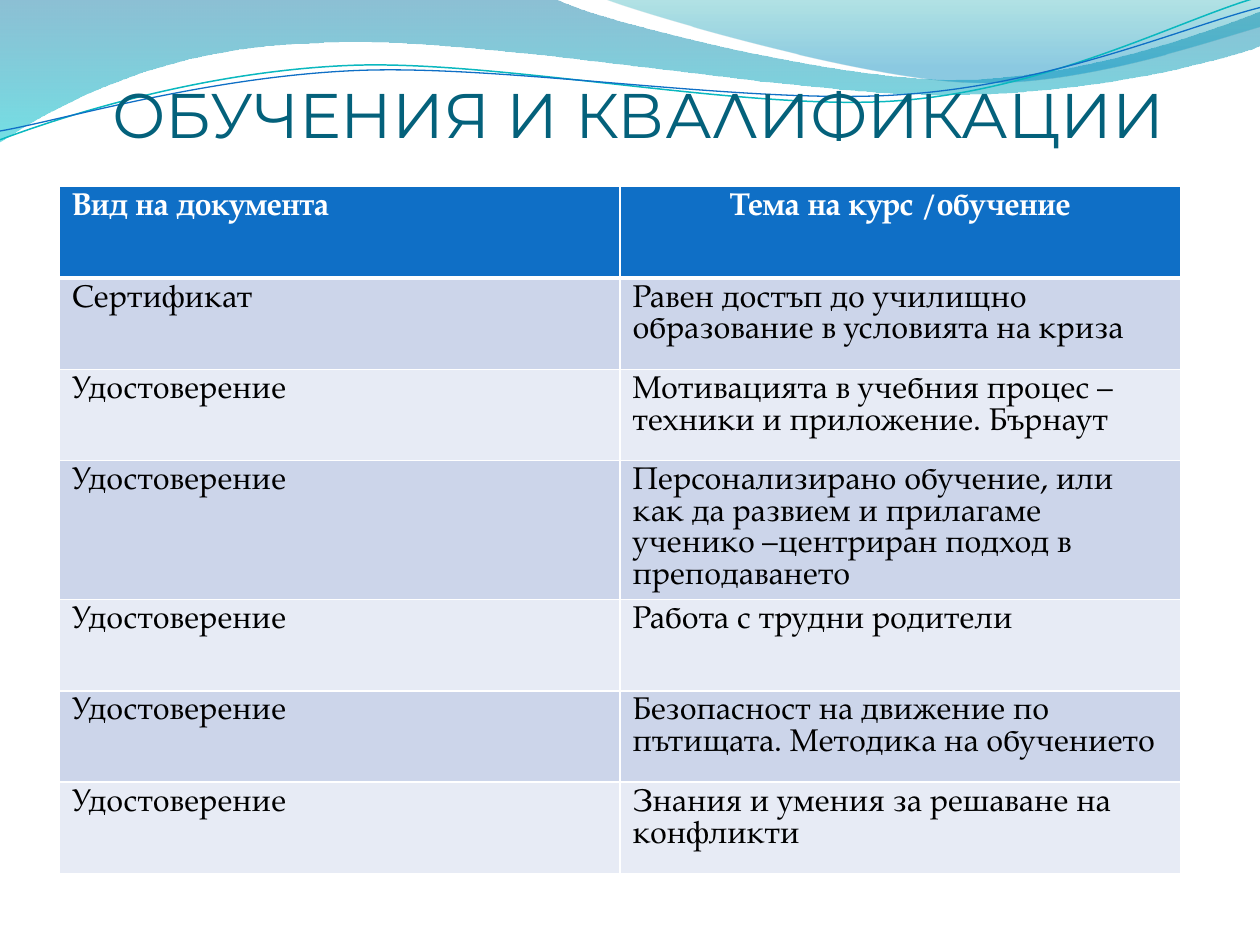
from lxml.etree import SubElement
from pptx import Presentation
from pptx.dml.color import RGBColor
from pptx.enum.lang import MSO_LANGUAGE_ID
from pptx.enum.text import MSO_ANCHOR, PP_ALIGN
from pptx.oxml.ns import qn
from pptx.util import Inches, Pt

COLORS = {
    "title": "04617B", "header": "0F6FC6", "header_text": "FFFFFF",
    "odd": "CCD5EA", "even": "E7EBF5", "text": "000000", "border": "FFFFFF",
    "teal_line": "0AB8BF", "blue_line": "0F6FC6",
    "deep_blue": "0074A1", "aqua": "00C6CF", "teal": "00A1A9", "sky": "008BBF",
}

deck = Presentation()
deck.slide_width, deck.slide_height = Inches(10), Inches(7.5)
width, height = deck.slide_width, deck.slide_height
page = deck.slides.add_slide(deck.slide_layouts[6])


def add_text(para, text, font, size, color, bold=False, align=PP_ALIGN.LEFT):
    para.alignment = align
    span = para.add_run()
    span.text = text
    span.font.name, span.font.size, span.font.bold = font, Pt(size), bold
    span.font.language_id = MSO_LANGUAGE_ID.BULGARIAN
    span.font.color.rgb = RGBColor.from_string(COLORS[color])


def add_wave(points, closed):
    """Draw a path in inches; a 2-tuple is a corner, a 6-tuple a Bézier curve."""
    points = [tuple(Inches(value) for value in point) for point in points]
    builder = page.shapes.build_freeform(*points[0], scale=1.0)
    builder.add_line_segments([point[-2:] for point in points[1:]], close=closed)
    wave = builder.convert_to_shape()
    wave.shadow.inherit = False
    segments = list(wave._element.iter(qn("a:lnTo")))
    for segment, point in zip(segments, points[1:]):
        if len(point) == 6:
            curve = segment.getparent().makeelement(qn("a:cubicBezTo"), {})
            for x, y in zip(point[::2], point[1::2]):
                SubElement(curve, qn("a:pt"), x=str(x - wave.left), y=str(y - wave.top))
            segment.getparent().replace(segment, curve)
    return wave


# Translucent bands: outline, then gradient stops (position, colour, opacity)
bands = [
    ([(0, 0), (4.4, -0.01), (4.76, 0.17, 6.64, 0.63, 7.58, 0.63),
      (8.53, 0.63, 9.58, 0.26, 10, 0.09), (10.01, 0.36),
      (9.83, 0.44, 8.7, 0.76, 7.46, 0.75), (6.22, 0.75, 3.82, 0.28, 2.57, 0.34),
      (1.29, 0.36, 0.46, 0.83, -0.01, 1.13)],
     [(0, "deep_blue", 45), (100, "aqua", 55)]),
    ([(4.79, -0.01), (5.09, 0.11, 6.82, 0.62, 7.69, 0.65),
      (8.56, 0.69, 9.61, 0.32, 10, 0.21), (10, 0)],
     [(0, "teal", 30), (80, "sky", 45)]),
]
for outline, stops in bands:
    band = add_wave(outline, closed=True)
    band.line.fill.background()
    band.fill.gradient()
    gradient = band._element.spPr.find(qn("a:gradFill"))
    for child in list(gradient):
        gradient.remove(child)
    stop_list = SubElement(gradient, qn("a:gsLst"))
    for position, color, opacity in stops:
        stop = SubElement(stop_list, qn("a:gs"), pos=str(position * 1000))
        paint = SubElement(stop, qn("a:srgbClr"), val=COLORS[color])
        SubElement(paint, qn("a:alpha"), val=str(opacity * 1000))
    SubElement(gradient, qn("a:lin"), ang="5400000", scaled="0")

strands = [
    ([(0, 1.11), (0.48, 0.93, 1.58, 0.57, 2.77, 0.52), (3.95, 0.47, 5.93, 0.89, 7.13, 0.8),
      (8.33, 0.71, 9.38, 0.15, 9.98, -0.02)], "teal_line", 0.85),
    ([(0, 1.04), (0.47, 0.96, 1.64, 0.61, 2.83, 0.56), (4.03, 0.51, 5.97, 0.84, 7.17, 0.75),
      (8.36, 0.67, 9.41, 0.21, 10, 0.06)], "blue_line", 0.75),
]
for outline, color, weight in strands:
    strand = add_wave(outline, closed=False)
    strand.fill.background()
    strand.line.color.rgb = RGBColor.from_string(COLORS[color])
    strand.line.width = Pt(weight)

left = Inches(0.47)
title = page.shapes.add_textbox(left, 0, int(width * 0.9), height // 6)
frame = title.text_frame
frame.word_wrap = True
frame.vertical_anchor = MSO_ANCHOR.BOTTOM
frame.margin_left = frame.margin_right = frame.margin_bottom = 0
for text, size in ((" ", 54), ("ОБУЧЕНИЯ И КВАЛИФИКАЦИИ", 36)):
    add_text(frame.paragraphs[0], text, "Montserrat", size, "title", align=PP_ALIGN.CENTER)

rows = [
    ("Вид на документа", "Тема на курс /обучение"),
    ("Сертификат", "Равен достъп до училищно образование в условията на криза"),
    ("Удостоверение", "Мотивацията в учебния процес – техники и приложение. Бърнаут"),
    ("Удостоверение", "Персонализирано обучение, или как да развием и прилагаме "
                      "ученико –центриран подход в преподаването"),
    ("Удостоверение", "Работа с трудни родители"),
    ("Удостоверение", "Безопасност на движение по пътищата. Методика на обучението"),
    ("Удостоверение", "Знания и умения за решаване на конфликти"),
]
longest = max(len(topic) for _, topic in rows)
table_frame = page.shapes.add_table(len(rows), 2, left, Inches(1.48), int(width * 0.89),
                                    Inches(5.08))
table = table_frame.table
for r, texts in enumerate(rows):
    is_header = r == 0
    fill = "header" if is_header else ("even", "odd")[r % 2]
    for c, text in enumerate(texts):
        cell = table.cell(r, c)
        para = cell.text_frame.paragraphs[0]
        add_text(para, text, "TeX Gyre Pagella", 18,
                 "header_text" if is_header else "text", bold=is_header,
                 align=PP_ALIGN.CENTER if is_header and c == 1 else PP_ALIGN.LEFT)
        if len(text) == longest:
            para.line_spacing = Pt(18)  # keeps the four-line row compact
        properties = cell._tc.get_or_add_tcPr()
        for side in ("lnL", "lnR", "lnT", "lnB"):
            thick = (r, side) in ((0, "lnB"), (1, "lnT"))
            border = SubElement(properties, qn(f"a:{side}"), w=str(Pt(3 if thick else 1)))
            paint = SubElement(border, qn("a:solidFill"))
            SubElement(paint, qn("a:srgbClr"), val=COLORS["border"])
        cell.fill.solid()
        cell.fill.fore_color.rgb = RGBColor.from_string(COLORS[fill])

deck.save("out.pptx")
